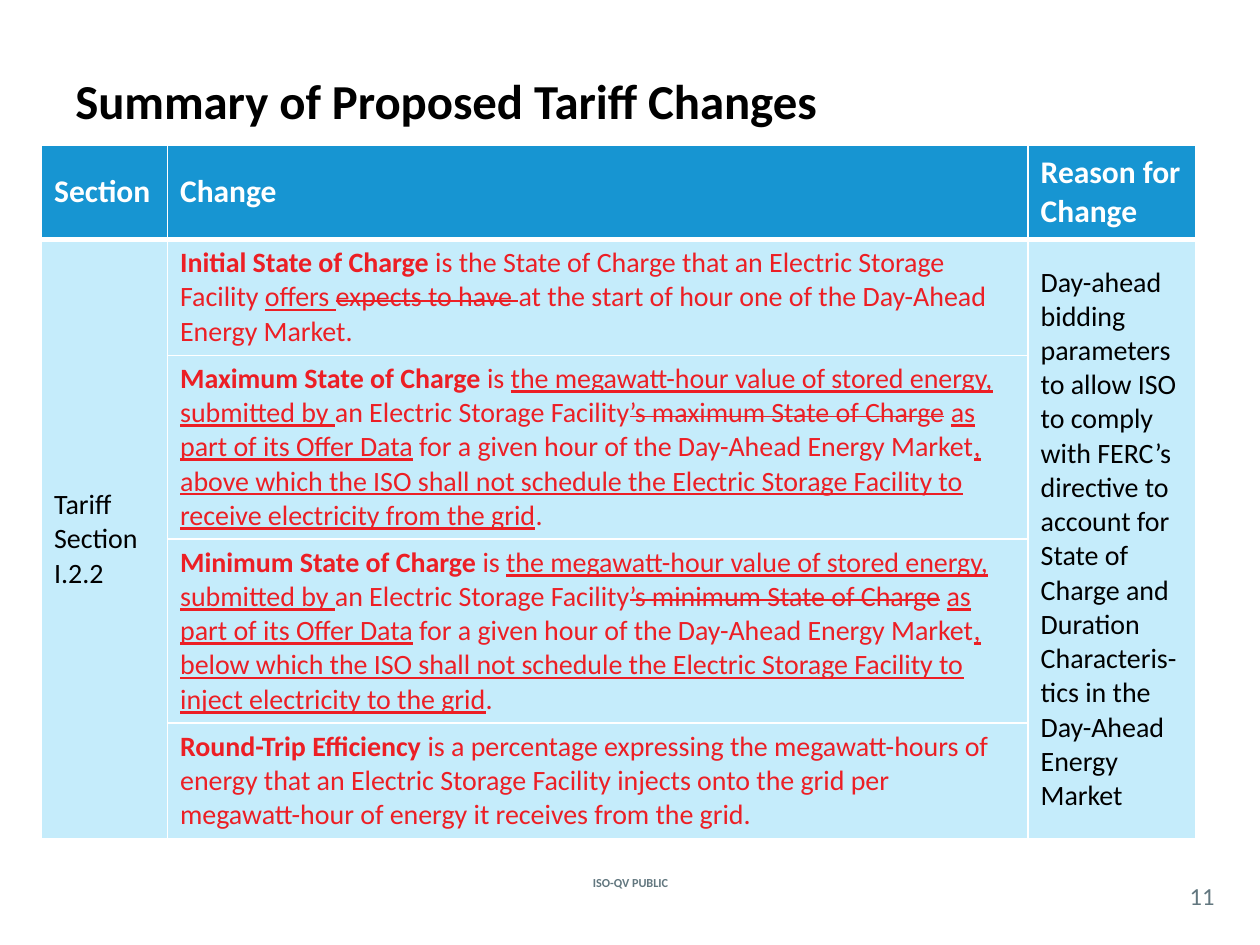
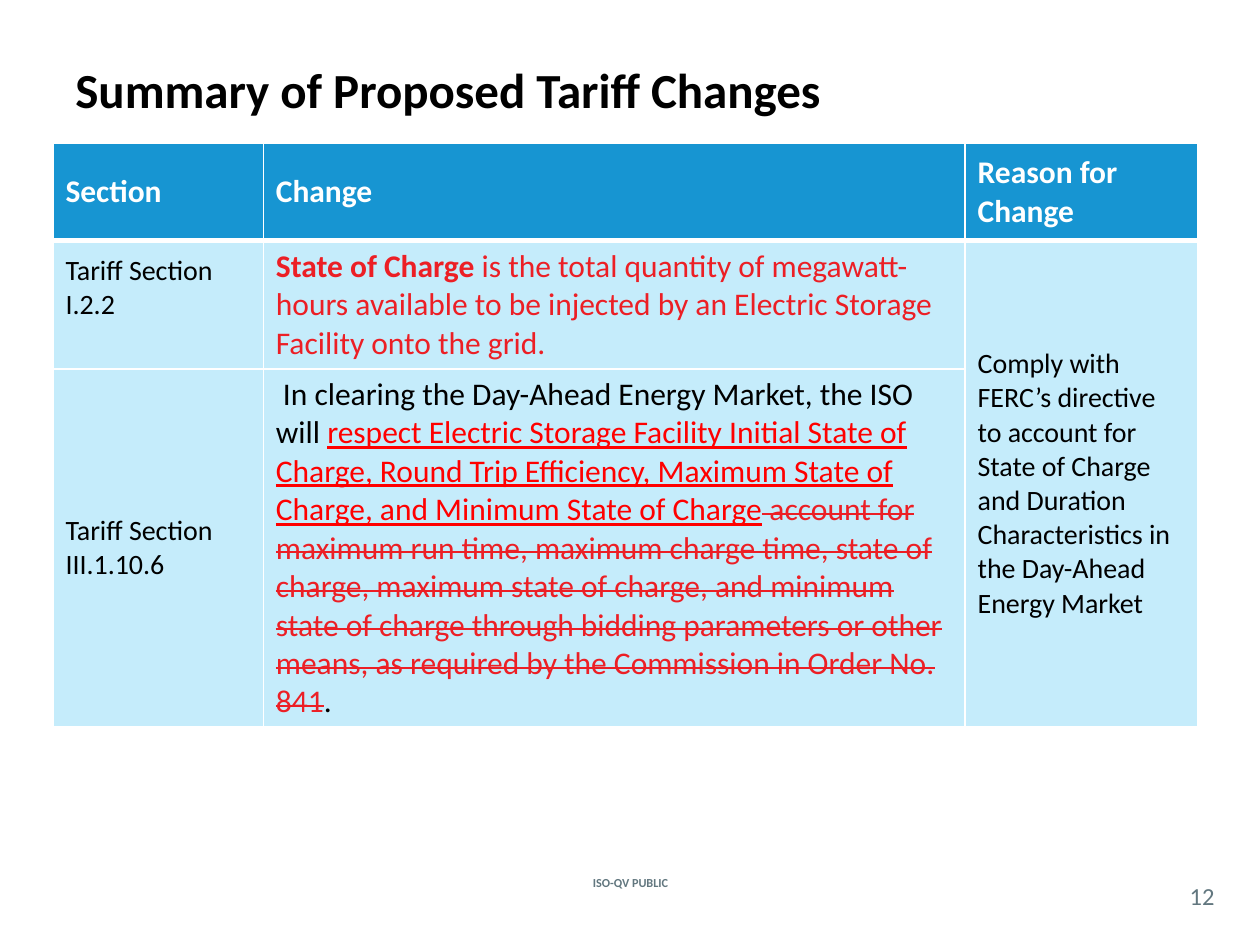
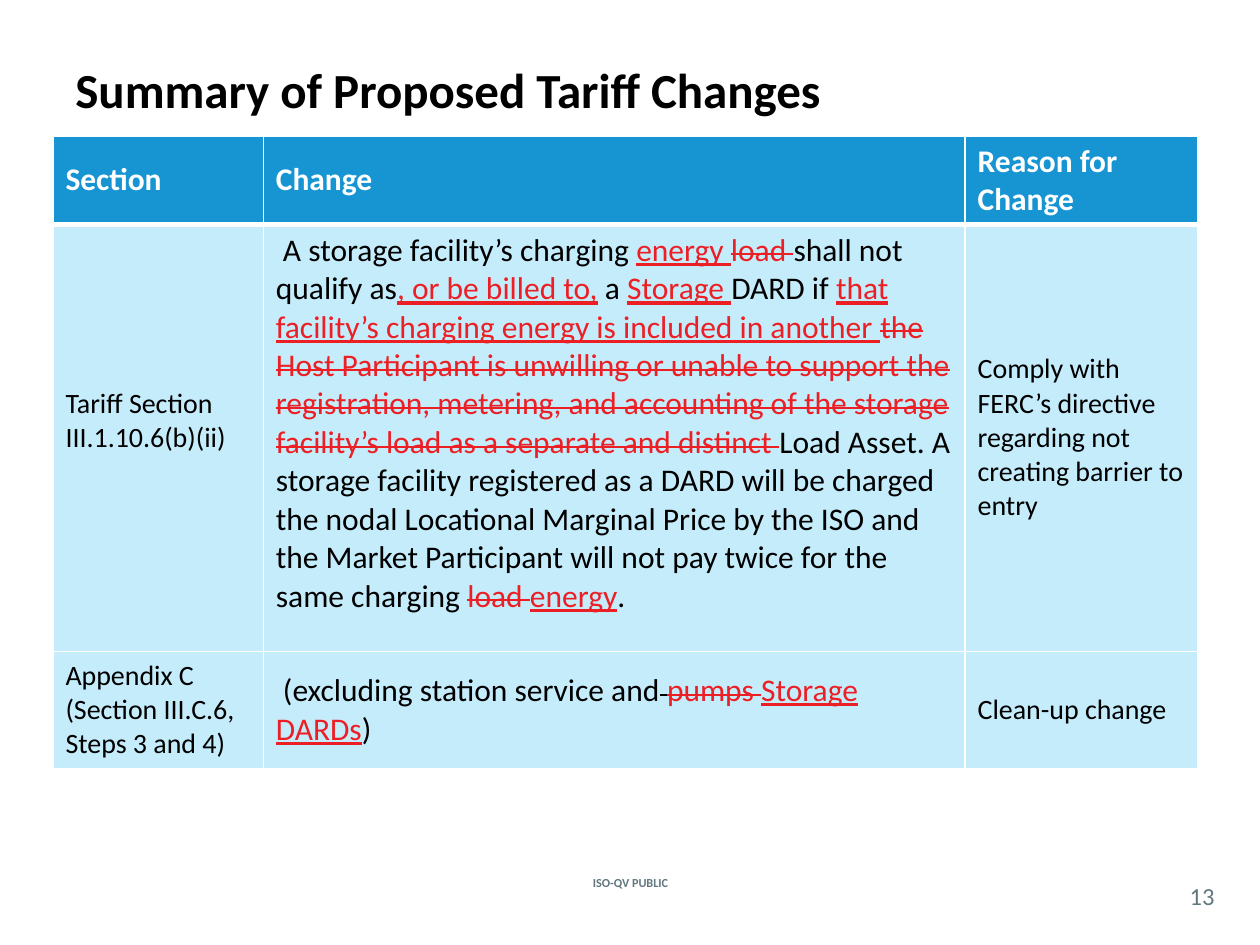
from dataclasses import dataclass

from lxml import etree
from pptx import Presentation
from pptx.dml.color import RGBColor
from pptx.enum.text import MSO_ANCHOR, PP_ALIGN
from pptx.oxml.ns import qn
from pptx.util import Inches, Pt

MIDDLE = MSO_ANCHOR.MIDDLE
LEFT, CENTER = PP_ALIGN.LEFT, PP_ALIGN.CENTER


@dataclass(frozen=True)
class Theme:
    font: str = "Calibri"
    black: str = "000000"
    white: str = "FFFFFF"
    grey: str = "62777F"
    header_fill: str = "1795D2"
    body_fill: str = "C5ECFB"
    red: str = "EC1F25"
    bright_red: str = "FF0000"
    header_size: float = 18
    body_size: float = 16
    footer_size: float = 7
    number_size: float = 14
    grid_line: float = 1
    header_line: float = 3
    cell_margins: tuple = (0.1, 0.05, 0.1, 0.05)


THEME = Theme()

# How each kind of tariff wording is marked up
MARKS = {
    "kept": {"color": THEME.black},
    "kept cut": {"color": THEME.black, "strike": True},
    "term": {"color": THEME.red, "bold": True},
    "rule": {"color": THEME.red},
    "added": {"color": THEME.red, "underline": True},
    "added bright": {"color": THEME.bright_red, "underline": True},
    "cut": {"color": THEME.red, "strike": True},
}

TITLE = "Summary of Proposed Tariff Changes"
FOOTER = "ISO-QV PUBLIC"
HEADINGS = ["Section", "Change", "Reason for Change"]
FIRST_NUMBER = 11


def charge_limit(name, side, action):
    """Definition of a charge limit, as marked-up wording."""
    return [
        (f"{name} State of Charge", "term"),
        (" is ", "rule"),
        ("the megawatt-hour value of stored energy, submitted by ", "added"),
        ("an Electric Storage Facility", "rule"),
        (f"’s {name.lower()} State of Charge", "cut"),
        (" ", "rule"),
        ("as part of its Offer Data", "added"),
        (" for a given hour of the Day-Ahead Energy Market", "rule"),
        (f", {side} which the ISO shall not schedule the Electric Storage "
         f"Facility to {action} the grid", "added"),
        (".", "rule"),
    ]


# In rows, None continues the cell above; slack is extra room below a cell's text
SLIDES = [
    {
        "title_top": 0.17, "title_size": 27.9,
        "left": 0.33, "top": 1.15, "change_size": 16,
        "columns": [1, 6.83, 1.33],
        "heights": [0.75, 0.92, 1.46, 1.46, 0.92],
        "slack": {},
        "rows": [
            ["Tariff Section\nI.2.2",
             [("Initial State of Charge", "term"),
              (" is the State of Charge that an Electric Storage Facility ", "rule"),
              ("offers ", "added"),
              ("expects to have ", "cut"),
              ("at the start of hour one of the Day-Ahead Energy Market.", "rule")],
             "Day-ahead bidding parameters to allow ISO to comply with FERC’s "
             "directive to account for State of Charge and Duration "
             "Characteris-tics in the Day-Ahead Energy Market"],
            [None, charge_limit("Maximum", "above", "receive electricity from"), None],
            [None, charge_limit("Minimum", "below", "inject electricity to"), None],
            [None,
             [("Round-Trip Efficiency", "term"),
              (" is a percentage expressing the megawatt-hours of energy that an "
               "Electric Storage Facility injects onto the grid per megawatt-hour "
               "of energy it receives from the grid.", "rule")],
             None],
        ],
    },
    {
        "title_top": 0.08, "title_size": 28,
        "left": 0.42, "top": 1.14, "change_size": 18,
        "columns": [1.67, 5.57, 1.85],
        "heights": [0.77, 1.02, 2.84],
        "slack": {(1, 0): 0.27},
        "rows": [
            ["Tariff Section\nI.2.2",
             [("State of Charge", "term"),
              (" is the total quantity of megawatt-hours available to be injected "
               "by an Electric Storage Facility onto the grid.", "rule")],
             "Comply with FERC’s directive to account for State of Charge and "
             "Duration Characteristics in the Day-Ahead Energy Market"],
            ["Tariff Section III.1.10.6",
             [(" In clearing the Day-Ahead Energy Market, the ISO will ", "kept"),
              ("respect Electric Storage Facility Initial State of Charge, Round "
               "Trip Efficiency, Maximum State of Charge, and Minimum State of "
               "Charge", "added bright"),
              (" account for maximum run time, maximum charge time, state of "
               "charge, maximum state of charge, and minimum state of charge "
               "through bidding parameters or other means, as required by the "
               "Commission in Order No. 841", "cut"),
              (".", "kept")],
             None],
        ],
    },
    {
        "title_top": 0.08, "title_size": 28,
        "left": 0.42, "top": 1.08, "change_size": 18,
        "columns": [1.67, 5.57, 1.85],
        "heights": [0.7, 3.39, 0.93],
        "slack": {(1, 0): 0.27, (1, 1): 0.23},
        "rows": [
            ["Tariff Section III.1.10.6(b)(ii)",
             [(" A storage facility’s charging ", "kept"),
              ("energy ", "added"),
              ("load ", "cut"),
              ("shall not qualify as", "kept"),
              (", or be billed to,", "added"),
              (" a ", "kept"),
              ("Storage ", "added"),
              ("DARD if ", "kept"),
              ("that facility’s charging energy is included in another ", "added"),
              ("the Host Participant is unwilling or unable to support the "
               "registration, metering, and accounting of the storage facility’s "
               "load as a separate and distinct ", "cut"),
              ("Load Asset. A storage facility registered as a DARD will be "
               "charged the nodal Locational Marginal Price by the ISO and the "
               "Market Participant will not pay twice for the same charging ", "kept"),
              ("load ", "cut"),
              ("energy", "added"),
              (".", "kept")],
             "Comply with FERC’s directive regarding not creating barrier to entry"],
            ["Appendix C (Section III.C.6, Steps 3 and 4)",
             [(" (excluding station service and", "kept"),
              (" ", "kept cut"),
              ("pumps ", "cut"),
              ("Storage DARDs", "added"),
              (")", "kept")],
             "Clean-up change"],
        ],
    },
]


def add_run(paragraph, text, size, color=THEME.black, bold=False,
            underline=False, strike=False):
    run = paragraph.add_run()
    run.text = text
    font = run.font
    font.name, font.size, font.bold = THEME.font, Pt(size), bold
    font.underline = underline
    font.color.rgb = RGBColor.from_string(color)
    if strike:
        run._r.get_or_add_rPr().set("strike", "sngStrike")


def write(frame, content, size, align=LEFT, **style):
    """Fill a frame with plain text (one paragraph a line) or marked-up wording."""
    if isinstance(content, str):
        lines = [[(line, style)] for line in content.split("\n")]
    else:
        lines = [[(text, MARKS[mark]) for text, mark in content]]
    for index, line in enumerate(lines):
        paragraph = frame.add_paragraph() if index else frame.paragraphs[0]
        paragraph.alignment = align
        for text, run_style in line:
            add_run(paragraph, text, size, **run_style)


def add_label(slide, box, text, size, margins=None, **style):
    frame = slide.shapes.add_textbox(*map(Inches, box)).text_frame
    frame.word_wrap = True
    frame.vertical_anchor = MIDDLE
    if margins is not None:
        frame.margin_left = frame.margin_right = Inches(margins)
        frame.margin_top = frame.margin_bottom = Inches(margins)
    write(frame, text, size, **style)


def set_borders(cell, top, bottom):
    """Draw white lines around a cell; top and bottom are widths in points."""
    widths = {"a:lnL": THEME.grid_line, "a:lnR": THEME.grid_line,
              "a:lnT": top, "a:lnB": bottom}
    properties = cell._tc.get_or_add_tcPr()
    for position, (tag, width) in enumerate(widths.items()):
        line = etree.Element(qn(tag), w=str(Pt(width)))
        fill = etree.SubElement(line, qn("a:solidFill"))
        etree.SubElement(fill, qn("a:srgbClr"), val=THEME.white)
        properties.insert(position, line)


def style_cell(cell, row, slack):
    left, top, right, bottom = map(Inches, THEME.cell_margins)
    cell.margin_left, cell.margin_right = left, right
    cell.margin_top, cell.margin_bottom = top, bottom + Inches(slack)
    cell.vertical_anchor = MIDDLE
    cell.fill.solid()
    color = THEME.body_fill if row else THEME.header_fill
    cell.fill.fore_color.rgb = RGBColor.from_string(color)
    set_borders(cell,
                top=THEME.header_line if row == 1 else THEME.grid_line,
                bottom=THEME.grid_line if row else THEME.header_line)


def merge_continued(table, rows):
    for column in range(len(HEADINGS)):
        start = 0
        for row, cells in enumerate(rows):
            if cells[column] is not None:
                start = row
            elif row + 1 == len(rows) or rows[row + 1][column] is not None:
                table.cell(start, column).merge(table.cell(row, column))


def add_changes(slide, page):
    rows = [HEADINGS] + page["rows"]
    columns, heights = page["columns"], page["heights"]
    box = (page["left"], page["top"], sum(columns), sum(heights))
    table = slide.shapes.add_table(len(rows), len(columns), *map(Inches, box)).table
    table.horz_banding = False
    for column, width in zip(table.columns, columns):
        column.width = Inches(width)
    for row, height in zip(table.rows, heights):
        row.height = Inches(height)
    for r, cells in enumerate(rows):
        for c, content in enumerate(cells):
            cell = table.cell(r, c)
            style_cell(cell, r, page["slack"].get((r, c), 0))
            if r == 0:
                write(cell.text_frame, content, THEME.header_size,
                      color=THEME.white, bold=True)
            elif content is not None:
                size = page["change_size"] if c == 1 else THEME.body_size
                write(cell.text_frame, content, size)
    merge_continued(table, rows)


def main():
    deck = Presentation()
    deck.slide_width, deck.slide_height = Inches(10), Inches(7.5)
    blank = deck.slide_layouts[6]
    for number, page in enumerate(SLIDES, FIRST_NUMBER):
        slide = deck.slides.add_slide(blank)
        add_label(slide, (4.27, 6.92, 1.47, 0.17), FOOTER, THEME.footer_size,
                  align=CENTER, color=THEME.grey, bold=True)
        add_label(slide, (9.33, 6.96, 0.42, 0.29), str(number), THEME.number_size,
                  margins=0, align=CENTER, color=THEME.grey)
        add_label(slide, (0.5, page["title_top"], 9, 1.25), TITLE,
                  page["title_size"], bold=True)
        add_changes(slide, page)
    deck.save("out.pptx")


if __name__ == "__main__":
    main()
